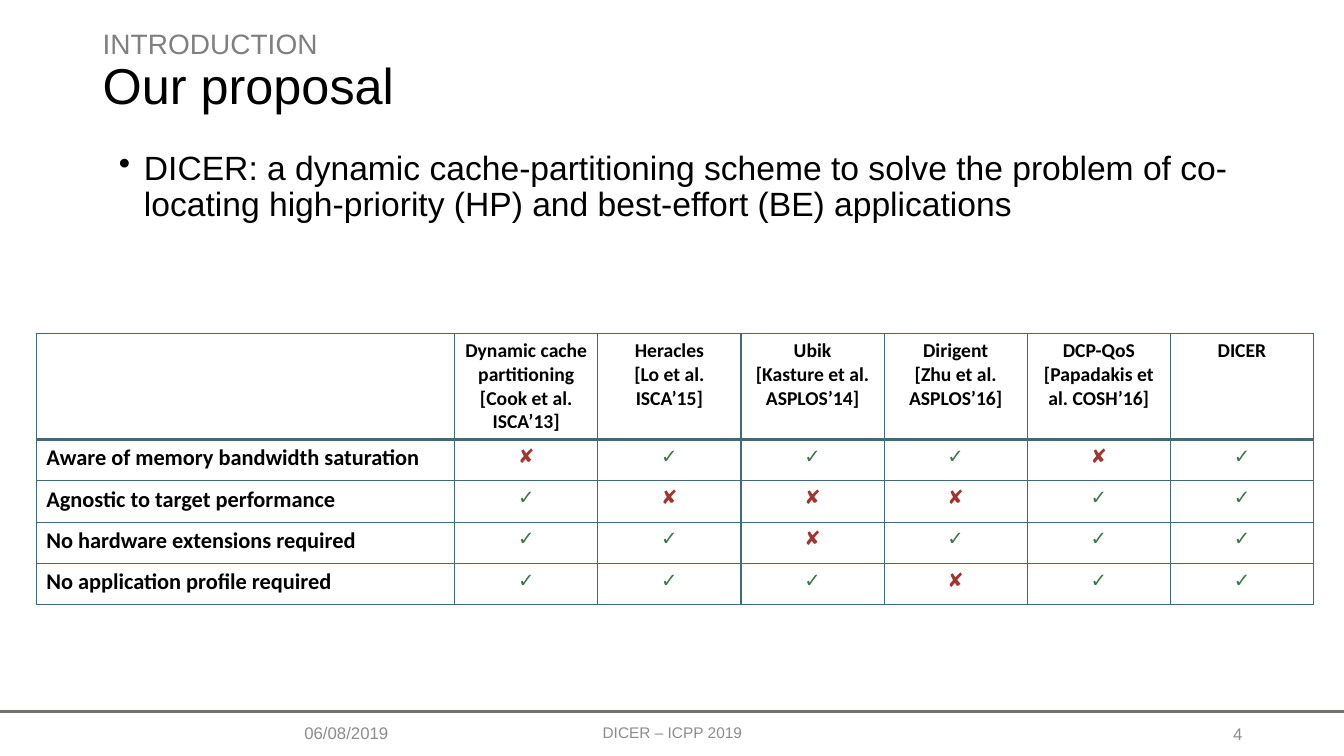
import pptx
import pptx.dml.color
import pptx.enum.shapes
import pptx.enum.text
import pptx.oxml
import pptx.oxml.ns
import pptx.util
from pptx.util import Inches

ALIGN = pptx.enum.text.PP_ALIGN
ANCHOR = pptx.enum.text.MSO_ANCHOR
BLACK, GREY, BORDER = "000000", "8C8C8C", "3E6A7B"
MARK_COLORS = {"✓": "39764A", "✘": "A13631"}


def style(run, size, color, font="Arial", bold=False):
    run.font.size = pptx.util.Pt(size)
    run.font.name = font
    run.font.bold = bold
    run.font.color.rgb = pptx.dml.color.RGBColor.from_string(color)


def add_text(left, top, width, height, text, formats, align=ALIGN.LEFT, anchor=ANCHOR.MIDDLE):
    box = slide.shapes.add_textbox(Inches(left), Inches(top), Inches(width), Inches(height))
    box.text_frame.word_wrap = True
    box.text_frame.vertical_anchor = anchor
    paragraph = box.text_frame.paragraphs[0]
    paragraph.text = text
    paragraph.alignment = align
    for run, (size, color) in zip(paragraph.runs, formats):
        style(run, size, color)
    return paragraph


presentation = pptx.Presentation()
presentation.slide_width = Inches(13.33)
presentation.slide_height = Inches(7.5)
slide = presentation.slides.add_slide(presentation.slide_layouts[6])

footer_line = slide.shapes.add_connector(
    pptx.enum.shapes.MSO_CONNECTOR.STRAIGHT, 0, Inches(7.06), Inches(13.33), Inches(7.06))
footer_line.line.width = pptx.util.Pt(2.25)
footer_line.line.color.rgb = pptx.dml.color.RGBColor.from_string("767171")
footer_line._element.spPr.append(pptx.oxml.parse_xml(
    f'<a:effectLst {pptx.oxml.ns.nsdecls("a")}/>'))

title = add_text(0.92, 0, 11.5, 1.45, "INTRODUCTION\nOur proposal", [(20, "808080"), (36, BLACK)])
title.line_spacing = 0.9
add_text(2.92, 7.13, 1.18, 0.28, "06/08/2019", [(12, GREY)])
add_text(4.42, 7.07, 4.5, 0.4, "DICER – ICPP 2019", [(11, GREY)], ALIGN.CENTER)
add_text(9.42, 7.08, 3, 0.4, "4", [(12, GREY)], ALIGN.RIGHT)

proposal = add_text(
    1.08, 1.45, 11.33, 1,
    "DICER: a dynamic cache-partitioning scheme to solve the problem of co-locating "
    "high-priority (HP) and best-effort (BE) applications",
    [(24, BLACK)], anchor=ANCHOR.TOP)
proposal_properties = proposal._p.get_or_add_pPr()
proposal_properties.set("marL", str(Inches(0.25)))
proposal_properties.set("indent", str(Inches(-0.25)))
proposal_properties.append(pptx.oxml.parse_xml(
    f'<a:buChar {pptx.oxml.ns.nsdecls("a")} char="•"/>'))
proposal.line_spacing = 0.9

rows = [
    ["", "Dynamic cache partitioning [Cook et al. ISCA’13]", "Heracles\n[Lo et al. ISCA’15]",
     "Ubik\n[Kasture et al. ASPLOS’14]", "Dirigent\n[Zhu et al. ASPLOS’16]",
     "DCP-QoS [Papadakis et al. COSH’16]", "DICER"],
    ["Aware of memory bandwidth saturation", *"✘✓✓✓✘✓"],
    ["Agnostic to target performance", *"✓✘✘✘✓✓"],
    ["No hardware extensions required", *"✓✓✘✓✓✓"],
    ["No application profile required", *"✓✓✓✘✓✓"],
]
table = slide.shapes.add_table(
    len(rows), len(rows[0]), Inches(0.36), Inches(3.31), Inches(12.67), Inches(2.69)).table
table.first_row = False
table.horz_banding = False
for column_index, column in enumerate(table.columns):
    column.width = Inches(1.42 if column_index else 4.15)
for row_index, texts in enumerate(rows):
    table.rows[row_index].height = Inches(0.41 if row_index else 1.05)
    for column_index, text in enumerate(texts):
        cell = table.cell(row_index, column_index)
        cell_properties = cell._tc.get_or_add_tcPr()
        for side in "LRTB":
            width = pptx.util.Pt(2 if row_index == 0 and side == "B" else 1)
            cell_properties.append(pptx.oxml.parse_xml(
                f'<a:ln{side} {pptx.oxml.ns.nsdecls("a")} w="{width}">'
                f'<a:solidFill><a:srgbClr val="{BORDER}"/></a:solidFill></a:ln{side}>'))
        cell.fill.background()
        paragraph = cell.text_frame.paragraphs[0]
        paragraph.text = text
        paragraph.alignment = ALIGN.CENTER if column_index else ALIGN.LEFT
        for run in paragraph.runs:
            style(run, 14 if column_index else 16, MARK_COLORS.get(text, BLACK),
                  "Calibri", text != "✘")

presentation.save("out.pptx")
